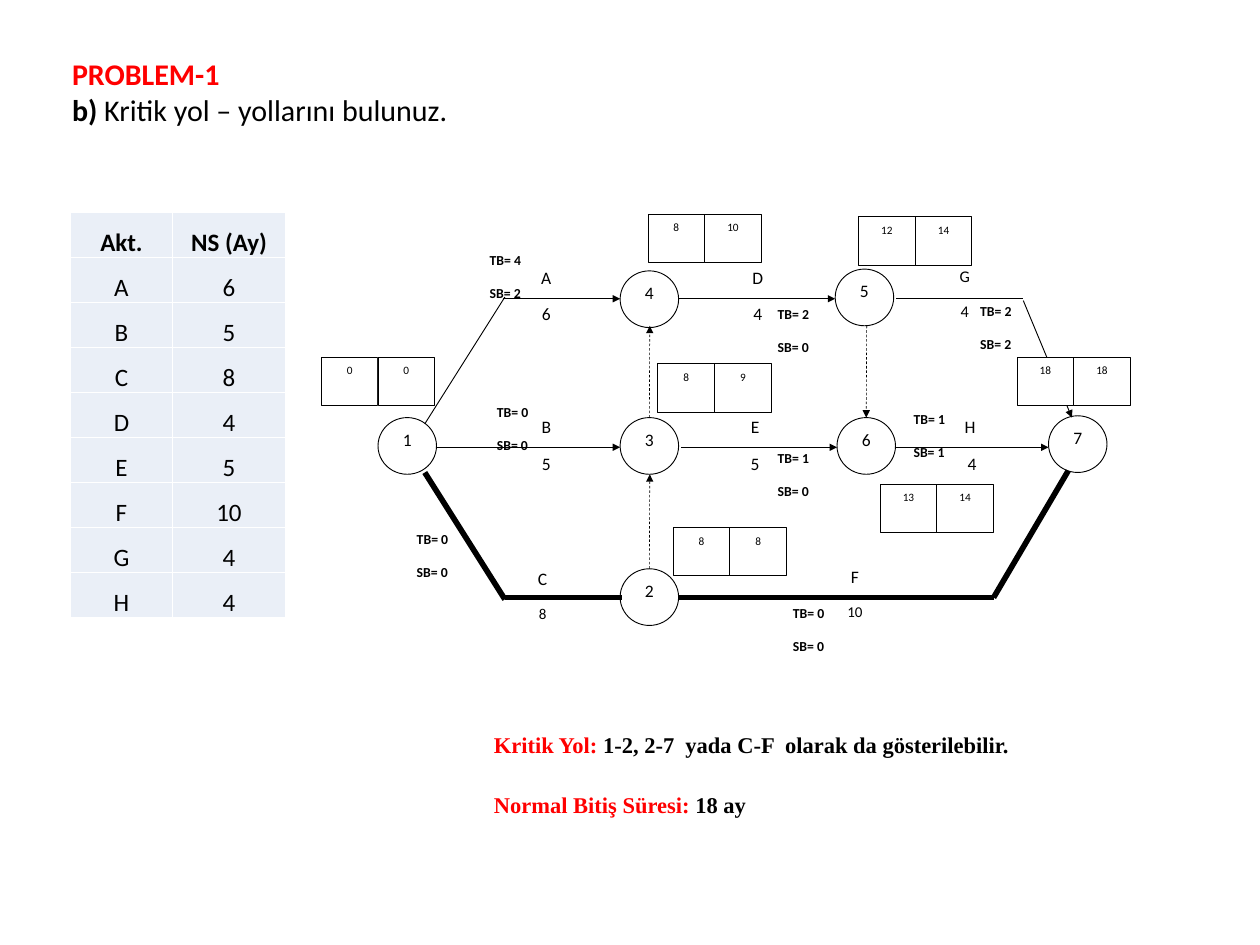
"""Build the critical path slide: activity table, network diagram and result."""
from lxml.etree import SubElement
from pptx import Presentation
from pptx.dml.color import RGBColor
from pptx.enum.dml import MSO_LINE
from pptx.enum.shapes import MSO_CONNECTOR, MSO_SHAPE
from pptx.enum.text import MSO_ANCHOR, MSO_AUTO_SIZE, PP_ALIGN
from pptx.oxml import parse_xml
from pptx.oxml.ns import nsdecls, qn
from pptx.util import Inches, Pt

BLACK = RGBColor(0x00, 0x00, 0x00)
WHITE = RGBColor(0xFF, 0xFF, 0xFF)
RED = RGBColor(0xFF, 0x00, 0x00)
PALE_BLUE = RGBColor(0xEA, 0xEF, 0xF7)
SERIF = "Times New Roman"


def write(para, text, size=14, font="Calibri", color=BLACK, bold=False,
          align=PP_ALIGN.CENTER, spacing=1.15, before=0, after=10):
    span = para.add_run()
    span.text = text
    span.font.size = Pt(size)
    span.font.name = font
    span.font.color.rgb = color
    span.font.bold = bold
    para.alignment = align
    para.line_spacing = spacing
    para.space_before = Pt(before)
    para.space_after = Pt(after)


def add_line(page, start, end, width=0.75, arrow=False, dashed=False):
    line = page.shapes.add_connector(
        MSO_CONNECTOR.STRAIGHT, *[Inches(value) for value in (*start, *end)])
    line.line.color.rgb = BLACK
    line.line.width = Pt(width)
    if dashed:
        line.line.dash_style = MSO_LINE.DASH
    if arrow:
        SubElement(line.line._get_or_add_ln(), qn("a:tailEnd"), type="triangle")
    SubElement(line._element.spPr, qn("a:effectLst"))
    return line


deck = Presentation()
deck.slide_width = Inches(14)
deck.slide_height = Inches(10.5)
page = deck.slides.add_slide(deck.slide_layouts[5])

title = page.shapes.title
title.left, title.top = Inches(0.7), Inches(0.57)
title.width, title.height = Inches(12.9), Inches(1.31)
frame = title.text_frame
frame.auto_size = MSO_AUTO_SIZE.NONE
frame.vertical_anchor = MSO_ANCHOR.TOP
heading = dict(size=24, align=PP_ALIGN.LEFT, spacing=1.0, after=0)
write(frame.paragraphs[0], "PROBLEM-1", color=RED, bold=True, **heading)
question = frame.add_paragraph()
write(question, "b)", bold=True, **heading)
write(question, " Kritik yol – yollarını bulunuz.", **heading)

events = {}
for number, left, top in [
    ("1", 4.2, 4.64), ("2", 6.89, 6.32), ("3", 6.89, 4.64), ("4", 6.89, 3.01),
    ("5", 9.28, 2.99), ("6", 9.3, 4.64), ("7", 11.65, 4.62),
]:
    circle = page.shapes.add_shape(
        MSO_SHAPE.OVAL, Inches(left), Inches(top), Inches(0.65), Inches(0.63))
    circle.shadow.inherit = False
    circle.fill.solid()
    circle.fill.fore_color.rgb = WHITE
    circle.line.color.rgb = BLACK
    circle.line.width = Pt(0.75)
    frame = circle.text_frame
    frame.vertical_anchor = MSO_ANCHOR.TOP
    frame.margin_left = frame.margin_right = frame.margin_top = frame.margin_bottom = 0
    write(frame.paragraphs[0], number)
    events[number] = circle

for start, end, arrow in [
    ((4.72, 4.71), (5.61, 3.3), False),
    ((5.59, 3.32), (6.89, 3.32), True),
    ((4.85, 4.97), (6.89, 4.97), True),
    ((7.54, 3.32), (9.28, 3.32), True),
    ((7.57, 4.97), (9.3, 4.97), True),
    ((9.96, 4.97), (11.65, 4.97), True),
    ((9.96, 3.32), (11.37, 3.32), False),
    ((11.37, 3.34), (11.91, 4.64), True),
]:
    add_line(page, start, end, arrow=arrow)

for start, end in [
    ((4.72, 5.25), (5.61, 6.66)),
    ((5.61, 6.64), (6.91, 6.64)),
    ((7.54, 6.64), (11.04, 6.64)),
    ((11.04, 6.64), (11.87, 5.23)),
]:
    add_line(page, start, end, width=4.5)

dummy = dict(width=0.5, arrow=True, dashed=True)
add_line(page, (7.22, 6.32), (7.22, 5.27), **dummy).begin_connect(events["2"], 0)
add_line(page, (7.22, 4.64), (7.22, 3.62), **dummy).begin_connect(events["3"], 0)
add_line(page, (9.63, 3.62), (9.63, 4.64), **dummy).end_connect(events["6"], 0)

for activity, duration, left, top, name_size, duration_size in [
    ("A", "6", 5.59, 2.88, 14, 14), ("B", "5", 5.59, 4.54, 14, 14),
    ("C", "8", 5.55, 6.23, 14, 12), ("D", "4", 7.94, 2.88, 14, 14),
    ("E", "5", 7.91, 4.54, 14, 14), ("F", "10", 9.02, 6.21, 14, 12),
    ("G", "4", 10.24, 2.88, 13, 13), ("H", " 4", 10.3, 4.54, 14, 14),
]:
    box = page.shapes.add_textbox(Inches(left), Inches(top), Inches(0.96), Inches(1.26))
    box.text_frame.word_wrap = True
    write(box.text_frame.paragraphs[0], activity, size=name_size)
    write(box.text_frame.add_paragraph(), duration, size=duration_size)

for times, left, top in [
    (("0", "0"), 3.57, 3.97), (("8", "8"), 7.48, 5.86), (("13", "14"), 9.78, 5.38),
    (("8", "9"), 7.31, 4.04), (("8", "10"), 7.2, 2.38), (("12", "14"), 9.54, 2.41),
    (("18", "18"), 11.3, 3.97),
]:
    for column, time in enumerate(times):
        time_box = page.shapes.add_shape(
            MSO_SHAPE.RECTANGLE, Inches(left + 0.63 * column), Inches(top),
            Inches(0.63), Inches(0.54))
        time_box.shadow.inherit = False
        time_box.fill.solid()
        time_box.fill.fore_color.rgb = WHITE
        time_box.line.color.rgb = BLACK
        time_box.line.width = Pt(0.75)
        time_box.text_frame.vertical_anchor = MSO_ANCHOR.TOP
        write(time_box.text_frame.paragraphs[0], time, size=9)

activities = [
    ("Akt.", "NS (Ay)"), ("A", "6"), ("B", "5"), ("C", "8"), ("D", "4"),
    ("E", "5"), ("F", "10"), ("G", "4"), ("H", "4"),
]
table = page.shapes.add_table(
    len(activities), 2, Inches(0.78), Inches(2.36), Inches(2.39), Inches(4.04)).table
table.first_row = False
table.horz_banding = False
table.columns[0].width = Inches(1.14)
table.columns[1].width = Inches(1.25)
for row, values in enumerate(activities):
    for column, value in enumerate(values):
        cell = table.cell(row, column)
        cell.vertical_anchor = MSO_ANCHOR.MIDDLE
        cell.margin_left = cell.margin_right = Inches(0.14)
        cell.margin_top = cell.margin_bottom = 0
        write(cell.text_frame.paragraphs[0], value, size=20, bold=row == 0, spacing=1.5)
        properties = cell._tc.get_or_add_tcPr()
        for side in ("lnL", "lnR", "lnT", "lnB"):
            properties.append(parse_xml(
                f'<a:{side} {nsdecls("a")} w="12700"><a:solidFill>'
                f'<a:srgbClr val="{WHITE}"/></a:solidFill></a:{side}>'))
        cell.fill.solid()
        cell.fill.fore_color.rgb = PALE_BLUE

for label, answer, top in [
    ("Kritik Yol: ", "1-2, 2-7  yada C-F  olarak da gösterilebilir.", 8.07),
    ("Normal Bitiş Süresi: ", "18 ay", 8.74),
]:
    box = page.shapes.add_textbox(Inches(5.39), Inches(top), Inches(8.17), Inches(0.4))
    box.text_frame.word_wrap = True
    box.text_frame.vertical_anchor = MSO_ANCHOR.MIDDLE
    para = box.text_frame.paragraphs[0]
    result = dict(size=18, font=SERIF, bold=True, align=PP_ALIGN.JUSTIFY, spacing=1.0, after=0)
    write(para, label, color=RED, **result)
    write(para, answer, **result)

for total_float, free_float, left, top in [
    (0, 0, 4.34, 5.85), (0, 0, 8.52, 6.67), (4, 2, 5.15, 2.75), (0, 0, 5.23, 4.44),
    (2, 0, 8.35, 3.35), (2, 2, 10.6, 3.32), (1, 0, 8.35, 4.95), (1, 1, 9.86, 4.52),
]:
    box = page.shapes.add_textbox(Inches(left), Inches(top), Inches(0.79), Inches(0.47))
    frame = box.text_frame
    frame.word_wrap = True
    frame.margin_left, frame.margin_right = Inches(0.29), 0
    slack = dict(size=11, bold=True, align=PP_ALIGN.LEFT, spacing=1.0, after=0)
    write(frame.paragraphs[0], f"TB= {total_float}", **slack)
    write(frame.add_paragraph(), f"SB= {free_float}", before=13, **slack)

deck.save("out.pptx")
